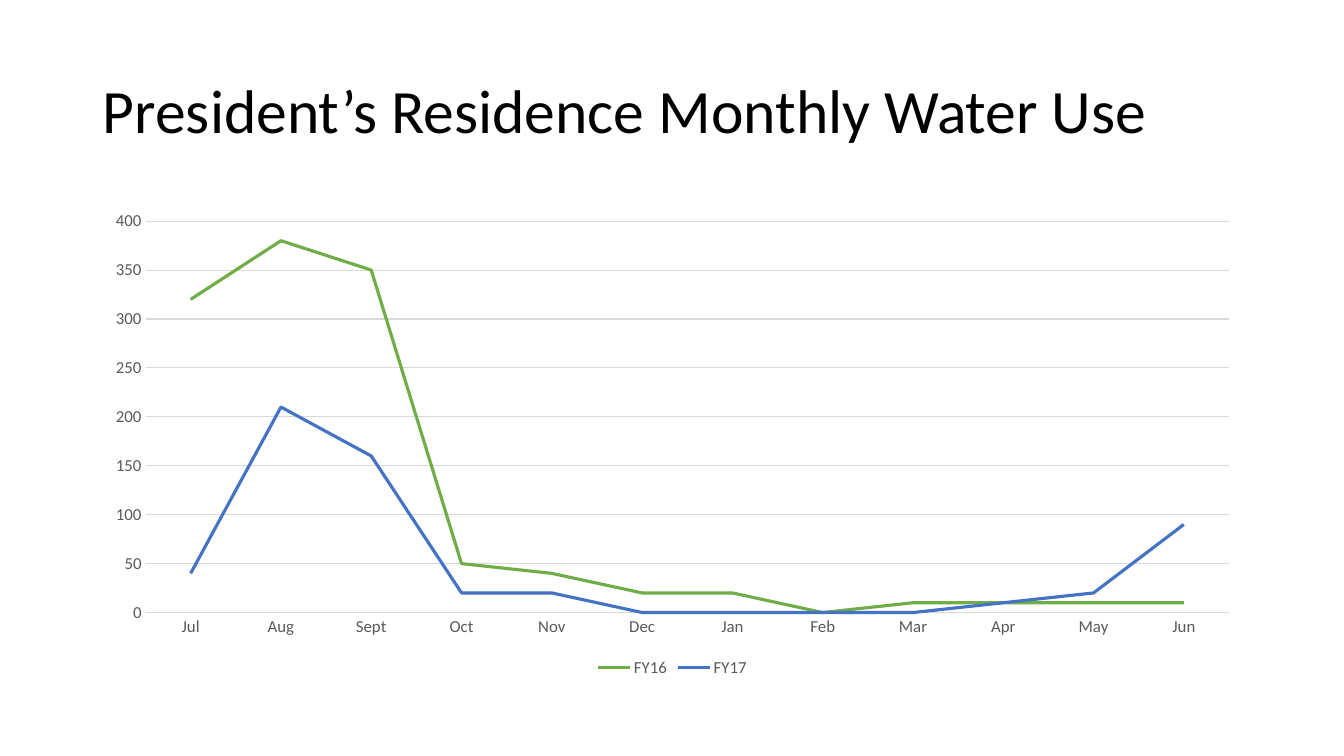
import dataclasses

import pptx
import pptx.chart.data
import pptx.dml.color
import pptx.enum.chart
import pptx.enum.text
import pptx.util

Inches = pptx.util.Inches
Pt = pptx.util.Pt


@dataclasses.dataclass(frozen=True)
class Theme:
    font: str = "Calibri"
    title_color: str = "000000"
    label_color: str = "595959"
    rule_color: str = "D9D9D9"
    title_size: float = 44
    label_size: float = 12
    rule_width: float = 0.75
    series_width: float = 2.25


THEME = Theme()
MONTHS = ["Jul", "Aug", "Sept", "Oct", "Nov", "Dec",
          "Jan", "Feb", "Mar", "Apr", "May", "Jun"]
WATER_USE = {
    "FY16": ("70AD47", [320, 380, 350, 50, 40, 20, 20, 0, 10, 10, 10, 10]),
    "FY17": ("4472C4", [40, 210, 160, 20, 20, 0, 0, 0, 0, 10, 20, 90]),
}


def set_all(target, values):
    for name, value in values.items():
        setattr(target, name, value)


def style_font(font, size, color):
    set_all(font, {"name": THEME.font, "size": Pt(size), "bold": False})
    font.color.rgb = pptx.dml.color.RGBColor.from_string(color)


def style_line(line, width, color):
    line.width = Pt(width)
    line.color.rgb = pptx.dml.color.RGBColor.from_string(color)


def place_title(page, box, text):
    title = page.shapes.title
    set_all(title, dict(zip(("left", "top", "width", "height"), box)))
    frame = title.text_frame
    set_all(frame, {
        "text": text,
        "word_wrap": True,
        "auto_size": pptx.enum.text.MSO_AUTO_SIZE.NONE,
        "vertical_anchor": pptx.enum.text.MSO_ANCHOR.MIDDLE,
    })
    para = frame.paragraphs[0]
    set_all(para, {"alignment": pptx.enum.text.PP_ALIGN.LEFT, "line_spacing": 0.9})
    style_font(para.runs[0].font, THEME.title_size, THEME.title_color)


def style_axes(chart):
    no_tick = pptx.enum.chart.XL_TICK_MARK.NONE
    for axis in (chart.category_axis, chart.value_axis):
        set_all(axis, {"major_tick_mark": no_tick, "minor_tick_mark": no_tick})
        style_font(axis.tick_labels.font, THEME.label_size, THEME.label_color)
    style_line(chart.category_axis.format.line, THEME.rule_width, THEME.rule_color)
    set_all(chart.value_axis, {
        "minimum_scale": 0,
        "maximum_scale": 400,
        "major_unit": 50,
        "has_major_gridlines": True,
    })
    chart.value_axis.format.line.fill.background()
    style_line(chart.value_axis.major_gridlines.format.line,
               THEME.rule_width, THEME.rule_color)


def place_chart(page, box):
    data = pptx.chart.data.CategoryChartData()
    data.categories = MONTHS
    for name, (color, values) in WATER_USE.items():
        data.add_series(name, values)
    chart = page.shapes.add_chart(pptx.enum.chart.XL_CHART_TYPE.LINE, *box, data).chart
    set_all(chart, {"has_title": False, "has_legend": True})
    style_font(chart.font, THEME.label_size, THEME.label_color)
    set_all(chart.legend, {
        "position": pptx.enum.chart.XL_LEGEND_POSITION.BOTTOM,
        "include_in_layout": False,
    })
    style_font(chart.legend.font, THEME.label_size, THEME.label_color)
    style_axes(chart)
    plot = chart.plots[0]
    plot.vary_by_categories = False
    for series in plot.series:
        series.smooth = False
        series.marker.style = pptx.enum.chart.XL_MARKER_STYLE.NONE
        style_line(series.format.line, THEME.series_width, WATER_USE[series.name][0])


def main():
    deck = pptx.Presentation()
    set_all(deck, {"slide_width": Inches(13.33), "slide_height": Inches(7.5)})
    page = deck.slides.add_slide(deck.slide_layouts.get_by_name("Title Only"))
    left, width = Inches(0.92), Inches(11.5)
    place_title(page, (left, Inches(0.4), width, Inches(1.45)),
                "President’s Residence Monthly Water Use")
    place_chart(page, (left, Inches(2), width, Inches(4.76)))
    deck.save("out.pptx")


if __name__ == "__main__":
    main()
